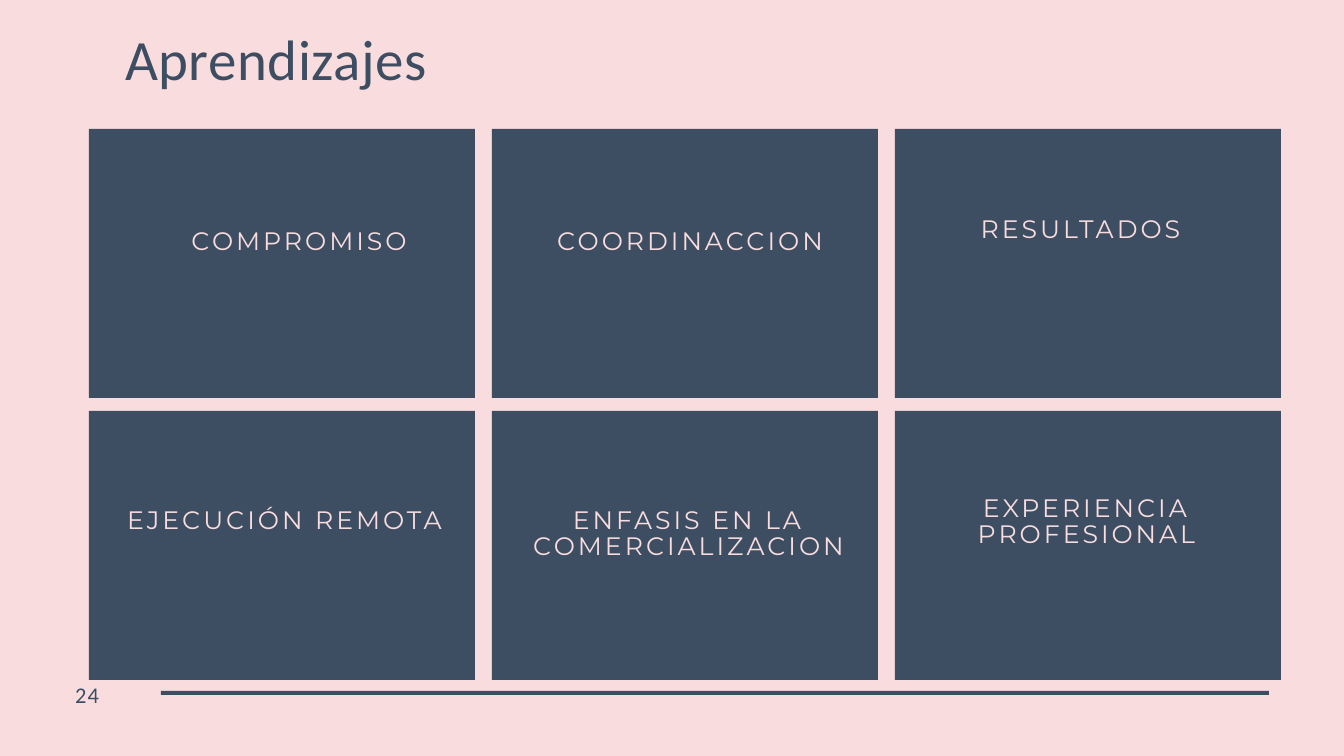
import pptx
import pptx.dml.color
import pptx.enum.shapes
import pptx.enum.text
import pptx.util

PX = 914400 / 67.2  # EMU per pixel
NAVY = pptx.dml.color.RGBColor(0x3D, 0x4E, 0x62)
PINK = pptx.dml.color.RGBColor(0xF8, 0xDC, 0xDE)
LEFT = pptx.enum.text.PP_ALIGN.LEFT
CENTER = pptx.enum.text.PP_ALIGN.CENTER


def add_block(left, top, width, height):
    shape = slide.shapes.add_shape(
        pptx.enum.shapes.MSO_SHAPE.RECTANGLE,
        *[round(value * PX) for value in (left, top, width, height)])
    shape.shadow.inherit = False
    shape.fill.solid()
    shape.fill.fore_color.rgb = NAVY
    shape.line.fill.background()


def write_text(shape, box, text, style):
    for name, value in zip(("left", "top", "width", "height"), box):
        setattr(shape, name, round(value * PX))
    frame_format = {
        "margin_left": 0, "margin_top": 0, "margin_right": 0, "margin_bottom": 0,
        "word_wrap": True,
        "auto_size": pptx.enum.text.MSO_AUTO_SIZE.NONE,
        "vertical_anchor": pptx.enum.text.MSO_ANCHOR.TOP,
    }
    for name, value in frame_format.items():
        setattr(shape.text_frame, name, value)
    paragraph = shape.text_frame.paragraphs[0]
    paragraph.alignment = style["alignment"]
    paragraph.line_spacing = pptx.util.Pt(style["line"])
    paragraph.space_before = pptx.util.Pt(0)
    run = paragraph.add_run()
    run.text = text
    for name, value in style["font"].items():
        setattr(run.font, name, value)
    run.font.color.rgb = style["color"]
    # Letter spacing, in hundredths of a point
    run._r.get_or_add_rPr().set("spc", str(style["tracking"]))


title_style = {"font": {"name": "Calibri", "size": pptx.util.Pt(61)}, "color": NAVY,
               "alignment": LEFT, "line": 54.3, "tracking": 60}
number_style = {"font": {"name": "Calibri", "size": pptx.util.Pt(24)}, "color": NAVY,
                "alignment": LEFT, "line": 33.6, "tracking": 140}
label_style = {"font": {"name": "Montserrat", "size": pptx.util.Pt(27)}, "color": PINK,
               "alignment": CENTER, "line": 27.8, "tracking": 320}

presentation = pptx.Presentation()
presentation.slide_width = pptx.util.Inches(20)
presentation.slide_height = pptx.util.Inches(11.25)
slide = presentation.slides.add_slide(presentation.slide_layouts[5])
slide.background.fill.solid()
slide.background.fill.fore_color.rgb = PINK

# Title
write_text(slide.shapes.title, (125, 41, 1127, 56), "Aprendizajes", title_style)

# Footer rule and page number
add_block(161, 691, 1108, 4)
write_text(slide.shapes.add_textbox(0, 0, 0, 0), (75, 677, 62, 30), "24", number_style)

# Grid of cards, three across and two down
for row in range(2):
    for column in range(3):
        add_block(89 + 403 * column, 129 + 282 * row, 386, 269)

# Card labels
labels = [
    ("COMPROMISO", (144, 230, 310, 28)),
    ("COORDINACCION", (535, 230, 310, 28)),
    ("RESULTADOS", (913, 218, 335, 28)),
    ("EJECUCIÓN REMOTA", (122, 509, 325, 28)),
    ("ENFASIS EN LA COMERCIALIZACION", (526, 509, 325, 56)),
    ("EXPERIENCIA PROFESIONAL", (924, 497, 325, 56)),
]
for text, box in labels:
    write_text(slide.shapes.add_textbox(0, 0, 0, 0), box, text, label_style)

presentation.save("out.pptx")
